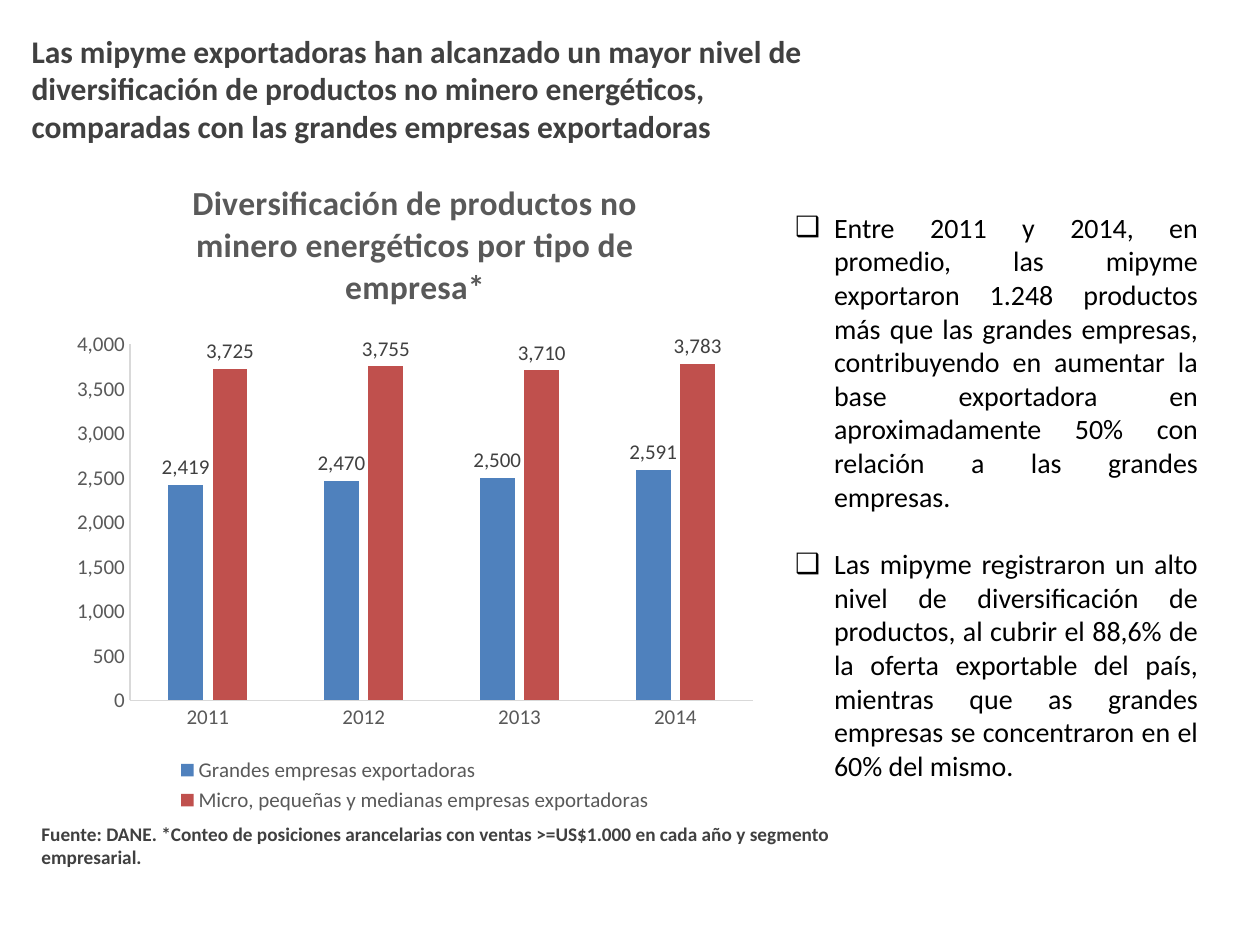
from lxml import etree
from pptx import Presentation
from pptx.chart.data import CategoryChartData
from pptx.dml.color import RGBColor
from pptx.enum import chart as kinds, text
from pptx.oxml import ns
from pptx.util import Inches, Pt

COLORS = {"heading": "404040", "axis": "595959", "line": "D9D9D9",
          "large": "4F81BD", "small": "C0504D", "body": "000000"}
FONT = "Calibri"
HEADING = ("Las mipyme exportadoras han alcanzado un mayor nivel de diversificación de "
           "productos no minero energéticos, comparadas con las grandes empresas exportadoras")
CHART_TITLE = "Diversificación de productos no minero energéticos por tipo de empresa*"
YEARS = ["2011", "2012", "2013", "2014"]
SERIES = [
    ("Grandes empresas exportadoras", [2419, 2470, 2500, 2591], "large"),
    ("Micro, pequeñas y medianas empresas exportadoras", [3725, 3755, 3710, 3783], "small"),
]
SOURCE = ("Fuente: DANE. *Conteo de posiciones arancelarias con ventas >=US$1.000 "
          "en cada año y segmento empresarial.")
FINDINGS = [
    "Entre 2011 y 2014, en promedio, las mipyme exportaron 1.248 productos más que las grandes "
    "empresas, contribuyendo en aumentar la base exportadora en aproximadamente 50% con "
    "relación a las grandes empresas.",
    "Las mipyme registraron un alto nivel de diversificación de productos, al cubrir el 88,6% "
    "de la oferta exportable del país, mientras que as grandes empresas se concentraron en "
    "el 60% del mismo.",
]


def color(name):
    return RGBColor.from_string(COLORS[name])


def style(font, size, name, bold=False):
    font.name, font.size, font.bold = FONT, Pt(size), bold
    font.color.rgb = color(name)


def place(box, left, top, width, height):
    box.left, box.top = Inches(left), Inches(top)
    box.width, box.height = Inches(width), Inches(height)
    frame = box.text_frame
    frame.word_wrap = True
    frame.auto_size = text.MSO_AUTO_SIZE.NONE
    frame.vertical_anchor = text.MSO_ANCHOR.TOP
    return frame


def write(para, words, size, name, bold=False):
    span = para.add_run()
    span.text = words
    style(span.font, size, name, bold)


def add_findings(frame):
    for index, words in enumerate(FINDINGS):
        para = frame.add_paragraph() if index else frame.paragraphs[0]
        para.alignment = text.PP_ALIGN.JUSTIFY
        para.space_before = Pt(19.5 if index else 0)
        properties = para._p.get_or_add_pPr()
        properties.set("marL", str(Inches(0.31)))
        properties.set("indent", str(-Inches(0.31)))
        etree.SubElement(properties, ns.qn("a:buChar")).set("char", "❑")
        write(para, words, 16, "body")


def add_columns(page):
    data = CategoryChartData(number_format="#,##0")
    data.categories = YEARS
    for name, values, _ in SERIES:
        data.add_series(name, values)
    chart = page.shapes.add_chart(kinds.XL_CHART_TYPE.COLUMN_CLUSTERED, Inches(0.5),
                                  Inches(1.21), Inches(5.59), Inches(5.28), data).chart
    style(chart.font, 10, "body")
    chart.has_title = True
    write(chart.chart_title.text_frame.paragraphs[0], CHART_TITLE, 19.2, "axis", True)
    chart.chart_title.include_in_layout = False
    chart.has_legend = True
    chart.legend.position = kinds.XL_LEGEND_POSITION.BOTTOM
    chart.legend.include_in_layout = False
    style(chart.legend.font, 12, "axis")

    for axis in (chart.category_axis, chart.value_axis):
        axis.has_major_gridlines = False
        axis.major_tick_mark = axis.minor_tick_mark = kinds.XL_TICK_MARK.NONE
        axis.format.line.color.rgb = color("line")
        axis.format.line.width = Pt(0.75)
        style(axis.tick_labels.font, 12, "axis")
    scale = chart.value_axis
    scale.minimum_scale, scale.maximum_scale, scale.major_unit = 0, 4000, 500
    scale.tick_labels.number_format = "#,##0"
    scale.tick_labels.number_format_is_linked = False

    plot = chart.plots[0]
    plot.gap_width, plot.overlap, plot.vary_by_categories = 219, -27, False
    for series, (_, _, name) in zip(plot.series, SERIES):
        series.format.fill.solid()
        series.format.fill.fore_color.rgb = color(name)
        labels = series.data_labels
        labels.show_value = True
        labels.position = kinds.XL_LABEL_POSITION.OUTSIDE_END
        style(labels.font, 12, "heading")


def main():
    deck = Presentation()
    deck.slide_width, deck.slide_height = Inches(10), Inches(7.5)
    page = deck.slides.add_slide(deck.slide_layouts[1])

    heading = place(page.shapes.title, 0.15, 0.2, 6.7, 1.01).paragraphs[0]
    heading.alignment = text.PP_ALIGN.LEFT
    write(heading, HEADING, 18, "heading", True)

    add_columns(page)

    note = page.shapes.add_textbox(0, 0, 0, 0)
    write(place(note, 0.23, 6.48, 6.61, 0.47).paragraphs[0], SOURCE, 11, "heading", True)

    add_findings(place(page.placeholders[1], 6.21, 1.62, 3.4, 4.68))
    deck.save("out.pptx")


if __name__ == "__main__":
    main()
